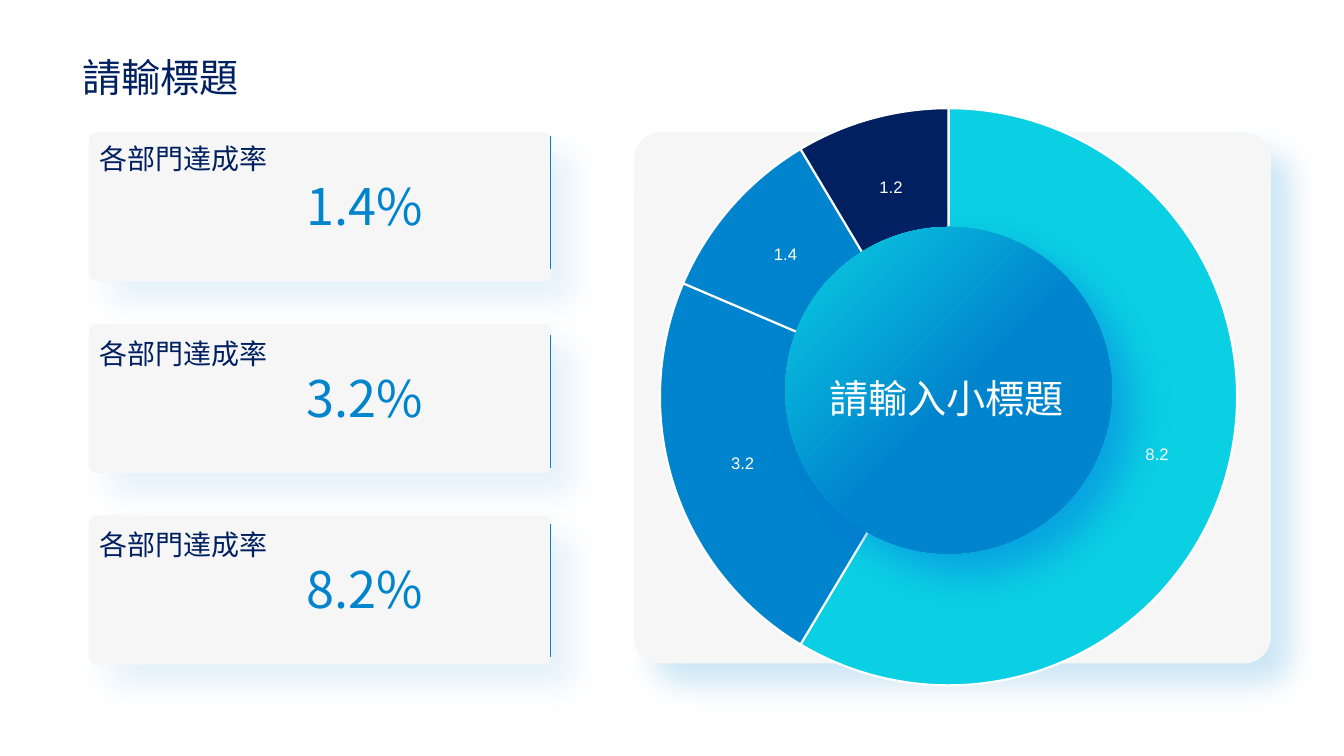
from dataclasses import dataclass

from lxml.etree import SubElement
from pptx import Presentation
from pptx.chart.data import CategoryChartData
from pptx.dml.color import RGBColor
from pptx.enum.chart import XL_CHART_TYPE
from pptx.enum.shapes import MSO_CONNECTOR, MSO_SHAPE
from pptx.enum.text import MSO_AUTO_SIZE
from pptx.oxml import parse_xml
from pptx.oxml.ns import nsdecls, qn
from pptx.util import Cm, Pt


@dataclass(frozen=True)
class Theme:
    navy: str = "002060"
    blue: str = "0084CD"
    cyan: str = "0BD0E3"
    glow: str = "0868DE"
    panel: str = "F6F6F6"
    white: str = "FFFFFF"
    text_font: str = "Noto Sans CJK SC"
    chart_font: str = "Arial"
    title_size: float = 28
    label_size: float = 20
    rate_size: float = 36
    chart_size: float = 10
    value_size: float = 11.9


theme = Theme()


def add_shadowed_shape(kind, left, top, width, height, color, opacity, blur, distance):
    shape = slide.shapes.add_shape(kind, Cm(left), Cm(top), Cm(width), Cm(height))
    if kind == MSO_SHAPE.ROUNDED_RECTANGLE:
        shape.adjustments[0] = 0.051
    shape.fill.solid()
    shape.fill.fore_color.rgb = RGBColor.from_string(theme.panel)
    shape.line.fill.background()
    shape.shadow.inherit = False
    effects = shape._element.spPr.find(qn("a:effectLst"))
    effects.append(parse_xml(
        f'<a:outerShdw {nsdecls("a")} blurRad="{Pt(blur)}" dist="{Pt(distance)}" '
        f'dir="2700000" algn="tl" rotWithShape="0"><a:srgbClr val="{color}">'
        f'<a:alpha val="{opacity * 1000}"/></a:srgbClr></a:outerShdw>'))
    return shape


def add_text(text, left, top, width, height, size, color, wrap=True):
    box = slide.shapes.add_textbox(Cm(left), Cm(top), Cm(width), Cm(height))
    frame = box.text_frame
    frame.word_wrap = wrap
    frame.auto_size = MSO_AUTO_SIZE.SHAPE_TO_FIT_TEXT
    run = frame.paragraphs[0].add_run()
    run.text = text
    run.font.size = Pt(size)
    run.font.name = theme.text_font
    run.font.color.rgb = RGBColor.from_string(color)
    SubElement(run.font._element, qn("a:ea")).set("typeface", theme.text_font)


presentation = Presentation()
presentation.slide_width = Cm(33.87)
presentation.slide_height = Cm(19.05)
slide = presentation.slides.add_slide(presentation.slide_layouts[6])

add_shadowed_shape(MSO_SHAPE.ROUNDED_RECTANGLE, 15.98, 3.33, 16.05, 13.39, theme.blue, 20, 22, 21)

chart_data = CategoryChartData()
chart_data.categories = ["1", "2", "3", "4"]
chart_data.add_series("Series 1", (8.2, 3.2, 1.4, 1.2))
chart = slide.shapes.add_chart(
    XL_CHART_TYPE.DOUGHNUT, Cm(13.21), Cm(2.34), Cm(21.39), Cm(15.32), chart_data).chart
chart.has_legend = False
chart.has_title = False
chart.font.size = Pt(theme.chart_size)
chart.font.name = theme.chart_font
chart.font.color.rgb = RGBColor.from_string(theme.navy)

plot = chart.plots[0]
plot.vary_by_categories = True
plot._element.find(qn("c:holeSize")).set("val", "75")
plot.has_data_labels = True
labels = plot.data_labels
labels.show_value = True
labels.show_percentage = False
labels.font.size = Pt(theme.value_size)
labels.font.name = theme.chart_font
labels.font.color.rgb = RGBColor.from_string(theme.white)

for index, color in enumerate((theme.cyan, theme.blue, theme.blue, theme.navy)):
    segment = plot.series[0].points[index].format
    segment.fill.solid()
    segment.fill.fore_color.rgb = RGBColor.from_string(color)
    segment.line.color.rgb = RGBColor.from_string(theme.white)
    segment.line.width = Pt(1.5)

plot_area = chart._chartSpace.chart.plotArea
for old_layout in plot_area.findall(qn("c:layout")):
    plot_area.remove(old_layout)
plot_area.insert(0, parse_xml(
    f'<c:layout {nsdecls("c")}><c:manualLayout><c:layoutTarget val="inner"/>'
    '<c:xMode val="edge"/><c:yMode val="edge"/><c:x val="0.16"/><c:y val="0.02"/>'
    '<c:w val="0.68"/><c:h val="0.96"/></c:manualLayout></c:layout>'))

center = add_shadowed_shape(MSO_SHAPE.OVAL, 19.79, 5.72, 8.23, 8.23, theme.glow, 44, 30, 20)
stops = "".join(
    f'<a:gs pos="{position * 1000}"><a:srgbClr val="{color}"/></a:gs>'
    for position, color in ((0, theme.cyan), (53, theme.blue), (100, theme.blue)))
center_properties = center._element.spPr
center_properties.replace(center_properties.find(qn("a:solidFill")), parse_xml(
    f'<a:gradFill {nsdecls("a")} rotWithShape="1"><a:gsLst>{stops}</a:gsLst>'
    '<a:lin ang="2700000" scaled="0"/></a:gradFill>'))

add_text("請輸標題", 1.83, 1.22, 4.47, 1.45, theme.title_size, theme.navy, wrap=False)
add_text("請輸入小標題", 20.65, 9.3, 6.5, 1.45, theme.title_size, theme.white)

cards = (("1.4%", 3.43, 3.43), ("3.2%", 8.36, 8.43), ("8.2%", 13.18, 13.2))
for row, (rate, label_top, accent_top) in enumerate(cards):
    card_top = 3.33 + row * 4.83
    add_shadowed_shape(
        MSO_SHAPE.ROUNDED_RECTANGLE, 2.24, card_top, 11.66, 3.76, theme.blue, 10, 22, 21)
    add_text("各部門達成率", 2.26, label_top, 5.77, 1.12, theme.label_size, theme.navy)
    add_text(rate, 7.47, card_top + 0.96, 3.91, 1.8, theme.rate_size, theme.blue)
    accent = slide.shapes.add_connector(
        MSO_CONNECTOR.STRAIGHT, Cm(13.87), Cm(accent_top), Cm(13.87), Cm(accent_top + 3.36))
    accent.line.color.rgb = RGBColor.from_string(theme.blue)
    accent.line.width = Pt(1)
    SubElement(accent._element.spPr, qn("a:effectLst"))

presentation.save("out.pptx")
